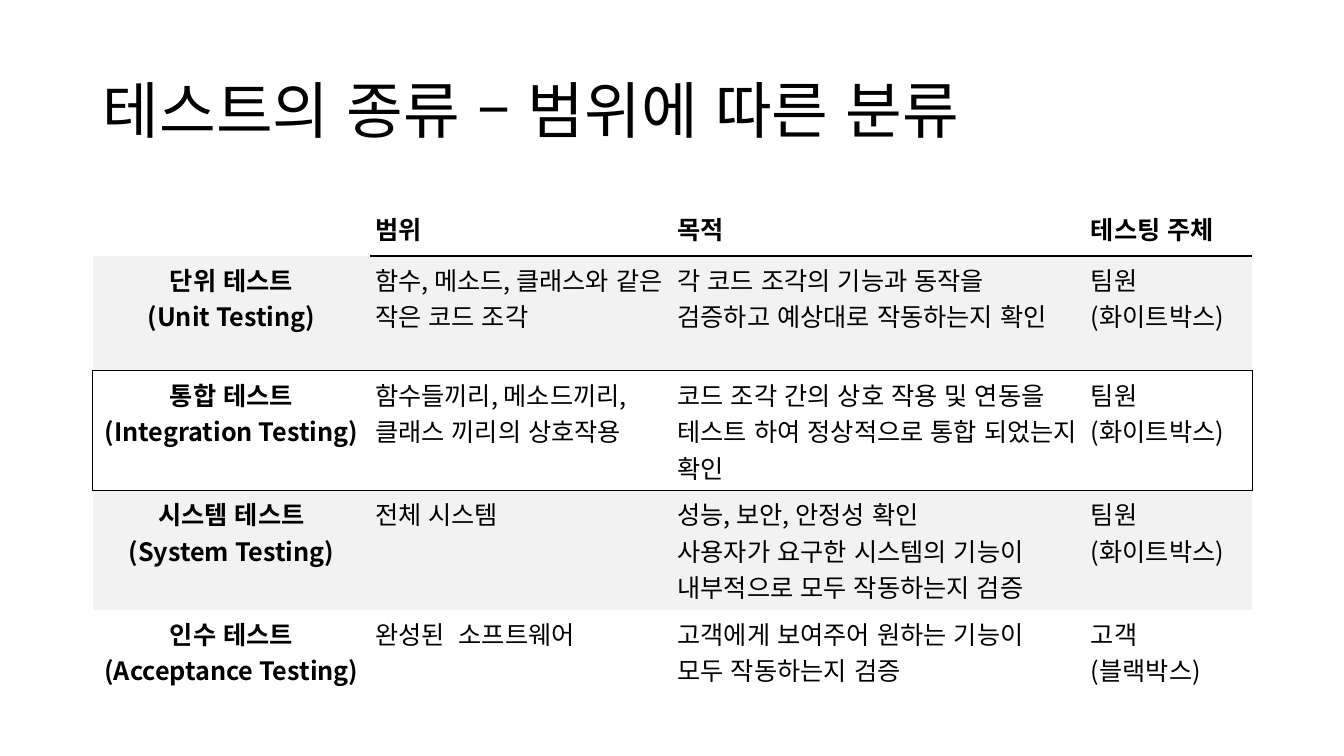
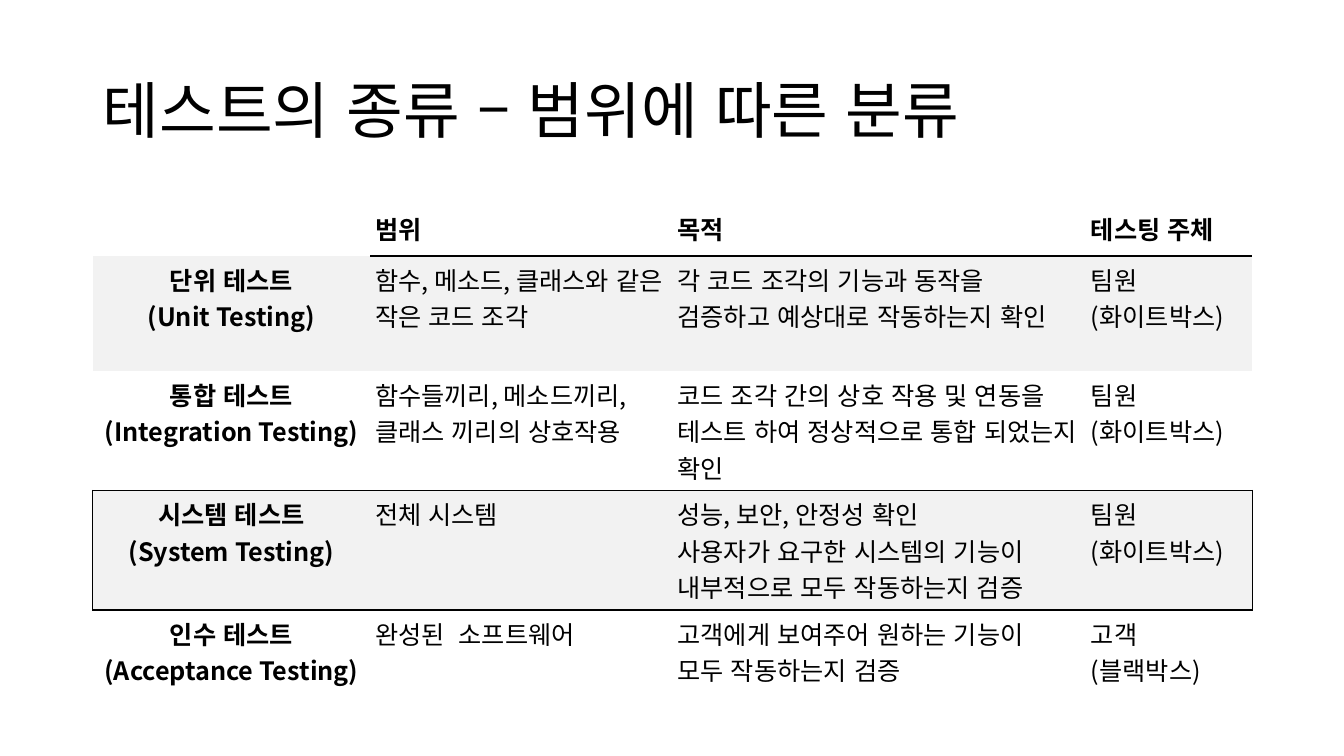
from lxml.etree import SubElement
from pptx import Presentation
from pptx.dml.color import RGBColor
from pptx.enum.lang import MSO_LANGUAGE_ID as Language
from pptx.enum.text import MSO_ANCHOR as Anchor, PP_ALIGN as Align
from pptx.oxml.ns import qn
from pptx.util import Pt

SCALE = 9144
FONT = "Noto Sans CJK KR"
BLACK, BAND = "000000", "F2F2F2"
TITLE_BOX = (92, 40, 1150, 145)
TABLE_BOX = (92, 200, 1150, 510)
COLUMN_WIDTHS = (275, 300, 410, 165)
HEADER_HEIGHT, CELL_MARGIN = 54, 5
TITLE = "테스트의 종류 – 범위에 따른 분류"
ROWS = (
    ("", "범위", "목적", "테스팅 주체"),
    ("단위 테스트\n(Unit Testing)",
     "함수, 메소드, 클래스와 같은 작은 코드 조각",
     "각 코드 조각의 기능과 동작을\n검증하고 예상대로 작동하는지 확인",
     "팀원\n(화이트박스)"),
    ("통합 테스트\n(Integration Testing)",
     "함수들끼리, 메소드끼리,\n클래스 끼리의 상호작용",
     "코드 조각 간의 상호 작용 및 연동을\n테스트 하여 정상적으로 통합 되었는지 확인",
     "팀원\n(화이트박스)"),
    ("시스템 테스트\n(System Testing)",
     "전체 시스템",
     "성능, 보안, 안정성 확인\n사용자가 요구한 시스템의 기능이\n내부적으로 모두 작동하는지 검증",
     "팀원\n(화이트박스)"),
    ("인수 테스트\n(Acceptance Testing)",
     "완성된  소프트웨어",
     "고객에게 보여주어 원하는 기능이\n모두 작동하는지 검증",
     "고객\n(블랙박스)"),
)
INTEGRATION_ROW, SYSTEM_ROW = 2, 3


def px(length):
    """Turn px into EMU."""
    return int(length * SCALE)


def color(value):
    """Turn a hex string into a colour."""
    return RGBColor.from_string(value)


def write(para, text, size, bold=False, align=Align.LEFT):
    """Write lines of text into a paragraph, run by run."""
    para.alignment = align
    for index, line in enumerate(text.split("\n")):
        if index:
            para.add_line_break()
        span = para.add_run()
        span.text = line
        span.font.size = Pt(size)
        span.font.bold = bold
        span.font.language_id = Language.KOREAN
        span.font.color.rgb = color(BLACK)
        span.font.name = FONT
        SubElement(span._r.get_or_add_rPr(), qn("a:ea"), typeface=FONT)


def set_borders(cell, sides):
    """Draw the named sides of a cell and clear the others."""
    properties = cell._tc.get_or_add_tcPr()
    for side in "LRTB":
        line = SubElement(properties, qn(f"a:ln{side}"), w=str(Pt(1)))
        if side in sides:
            fill = SubElement(line, qn("a:solidFill"))
            SubElement(fill, qn("a:srgbClr"), val=BLACK)
        else:
            SubElement(line, qn("a:noFill"))


def ruled_sides(row, column, framed_row):
    """Name the sides of a cell that lie on the header rule or the row frame."""
    last_column = len(COLUMN_WIDTHS) - 1
    sides = set()
    for side, edge in (("T", row), ("B", row + 1)):
        if edge in (framed_row, framed_row + 1) or (edge == 1 and column):
            sides.add(side)
    if row == framed_row and column == 0:
        sides.add("L")
    if row == framed_row and column == last_column:
        sides.add("R")
    return sides


def fill_cell(cell, row, column, framed_row):
    """Format one cell and write its text."""
    set_borders(cell, ruled_sides(row, column, framed_row))
    if row % 2:
        cell.fill.solid()
        cell.fill.fore_color.rgb = color(BAND)
    else:
        cell.fill.background()
    cell.margin_left = cell.margin_right = px(CELL_MARGIN)
    cell.margin_top = cell.margin_bottom = px(CELL_MARGIN)
    cell.vertical_anchor = Anchor.TOP if row else Anchor.MIDDLE
    text = ROWS[row][column]
    if text:
        align = Align.LEFT if column else Align.CENTER
        write(cell.text_frame.paragraphs[0], text, 18, row == 0 or column == 0, align)


def place_title(page, box):
    """Place the slide title in its box."""
    title = page.shapes.title
    title.left, title.top, title.width, title.height = map(px, box)
    title.text_frame.vertical_anchor = Anchor.MIDDLE
    title.text_frame.word_wrap = True
    para = title.text_frame.paragraphs[0]
    para.line_spacing = 0.9
    write(para, TITLE, 44)


def place_table(page, box, framed_row):
    """Place the table of test levels and frame one of its rows."""
    table = page.shapes.add_table(len(ROWS), len(COLUMN_WIDTHS), *map(px, box)).table
    table.first_row = table.horz_banding = False
    for column, width in zip(table.columns, COLUMN_WIDTHS):
        column.width = px(width)
    body_height = (box[3] - HEADER_HEIGHT) // (len(ROWS) - 1)
    for row in range(len(ROWS)):
        table.rows[row].height = px(body_height if row else HEADER_HEIGHT)
        for column in range(len(COLUMN_WIDTHS)):
            fill_cell(table.cell(row, column), row, column, framed_row)


def add_levels_page(deck, framed_row):
    """Add a slide of test levels with one level framed."""
    page = deck.slides.add_slide(deck.slide_layouts.get_by_name("Title Only"))
    place_title(page, TITLE_BOX)
    place_table(page, TABLE_BOX, framed_row)


def main():
    """Build and save the deck."""
    deck = Presentation()
    deck.slide_width, deck.slide_height = px(1333), px(750)
    for framed_row in (INTEGRATION_ROW, SYSTEM_ROW):
        add_levels_page(deck, framed_row)
    deck.save("out.pptx")


if __name__ == "__main__":
    main()
